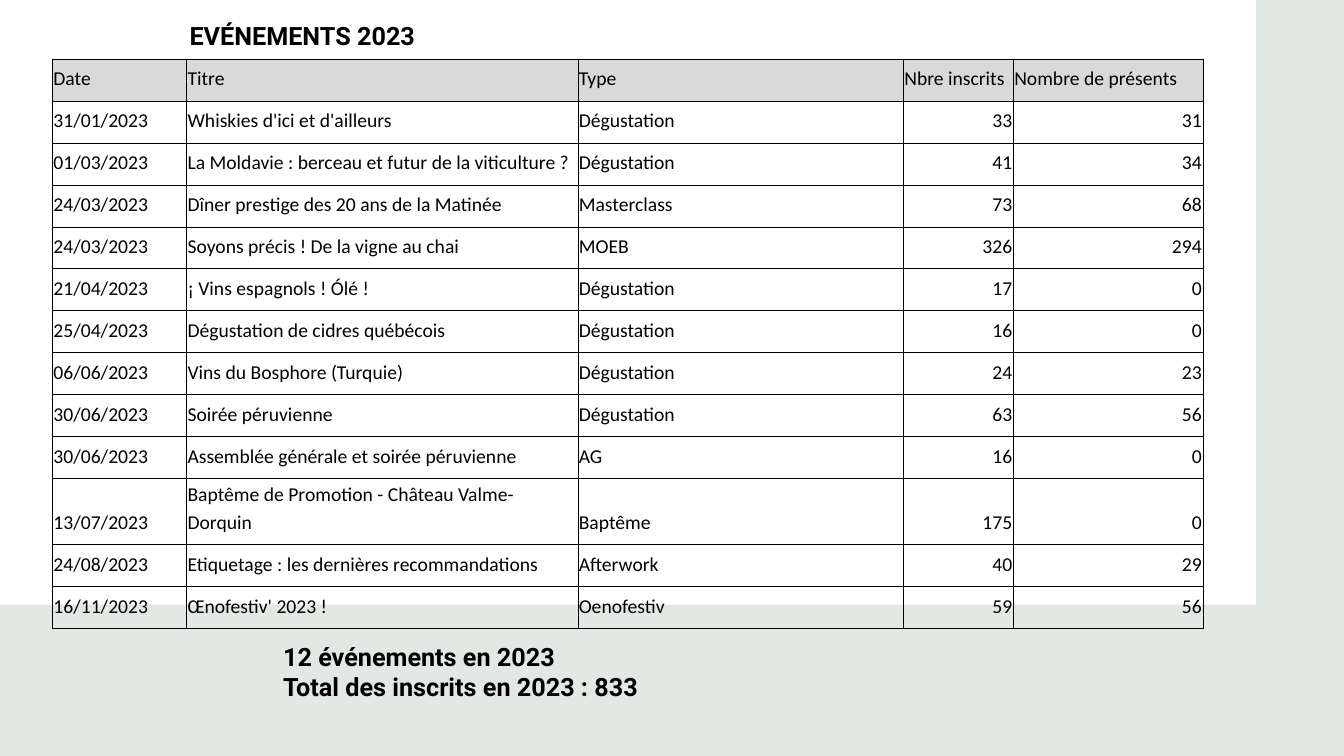
import dataclasses

import pptx
import pptx.dml.color
import pptx.enum.shapes
import pptx.enum.text
import pptx.oxml
import pptx.oxml.ns
import pptx.util

WIDTH = pptx.util.Inches(13.33)
HEIGHT = pptx.util.Inches(7.5)
ALIGN = pptx.enum.text.PP_ALIGN
ANCHOR = pptx.enum.text.MSO_ANCHOR

BLACK = "000000"
SAGE = "E2E8E4"
WHITE = "FFFFFF"
HEADER_GREY = "D9D9D9"

HEADING_FONT = {"name": "Roboto", "size": pptx.util.Pt(18), "bold": True}
CELL_FONT = {"name": "Calibri", "size": pptx.util.Pt(14), "bold": False}
CELL_FRAME = {
    "margin_left": pptx.util.Inches(0.01),
    "margin_right": pptx.util.Inches(0.01),
    "margin_top": pptx.util.Inches(0.01),
    "margin_bottom": pptx.util.Inches(0.1),
    "vertical_anchor": ANCHOR.BOTTOM,
}
BORDER_WIDTH = pptx.util.Pt(0.42)
ROW_SHARE = 5.55


@dataclasses.dataclass
class Box:
    """Place and size in percent of the slide's width and height."""

    left: float
    top: float
    width: float
    height: float

    def lengths(self) -> tuple[int, int, int, int]:
        return (
            across(self.left),
            down(self.top),
            across(self.width),
            down(self.height),
        )


@dataclasses.dataclass
class Column:
    heading: str
    share: float
    align: ALIGN = ALIGN.LEFT


@dataclasses.dataclass
class Event:
    date: str
    title: str
    kind: str
    registered: int
    present: int


COLUMNS = [
    Column("Date", 9.98),
    Column("Titre", 29.11),
    Column("Type", 24.23),
    Column("Nbre inscrits", 8.18, ALIGN.RIGHT),
    Column("Nombre de présents", 14.1, ALIGN.RIGHT),
]
EVENTS = [
    Event("31/01/2023", "Whiskies d'ici et d'ailleurs", "Dégustation", 33, 31),
    Event("01/03/2023", "La Moldavie : berceau et futur de la viticulture ?", "Dégustation", 41, 34),
    Event("24/03/2023", "Dîner prestige des 20 ans de la Matinée", "Masterclass", 73, 68),
    Event("24/03/2023", "Soyons précis ! De la vigne au chai", "MOEB", 326, 294),
    Event("21/04/2023", "¡ Vins espagnols ! Ólé !", "Dégustation", 17, 0),
    Event("25/04/2023", "Dégustation de cidres québécois", "Dégustation", 16, 0),
    Event("06/06/2023", "Vins du Bosphore (Turquie)", "Dégustation", 24, 23),
    Event("30/06/2023", "Soirée péruvienne", "Dégustation", 63, 56),
    Event("30/06/2023", "Assemblée générale et soirée péruvienne", "AG", 16, 0),
    Event("13/07/2023", "Baptême de Promotion - Château Valme-Dorquin", "Baptême", 175, 0),
    Event("24/08/2023", "Etiquetage : les dernières recommandations", "Afterwork", 40, 29),
    Event("16/11/2023", "Œnofestiv' 2023 !", "Oenofestiv", 59, 56),
]
PANELS = [(Box(0, 0, 100, 100), SAGE), (Box(0, 0, 93.47, 80), WHITE)]
TITLE_BOX = Box(13.35, 1.2, 66.77, 6.13)
TABLE_BOX = Box(3.9, 7.8, sum(c.share for c in COLUMNS), ROW_SHARE * (len(EVENTS) + 1))
SUMMARY_BOX = Box(20.33, 83.47, 28.43, 11.07)


def across(percent: float) -> int:
    return round(WIDTH * percent / 100)


def down(percent: float) -> int:
    return round(HEIGHT * percent / 100)


def rgb(value: str) -> pptx.dml.color.RGBColor:
    return pptx.dml.color.RGBColor.from_string(value)


def apply(target, values: dict) -> None:
    for name, value in values.items():
        setattr(target, name, value)


def write(p, text: str, font: dict, spacing: float = 1.0, align: ALIGN = ALIGN.LEFT) -> None:
    apply(p, {"line_spacing": spacing, "alignment": align})
    r = p.add_run()
    r.text = text
    apply(r.font, font)
    r.font.color.rgb = rgb(BLACK)


def draw_panel(s, box: Box, color: str) -> None:
    sp = s.shapes.add_shape(pptx.enum.shapes.MSO_SHAPE.RECTANGLE, *box.lengths())
    sp.shadow.inherit = False
    sp.fill.solid()
    sp.fill.fore_color.rgb = rgb(color)
    sp.line.fill.background()


def draw_heading(sp, box: Box, lines: list[str], inset: float, spacing: float = 1.0) -> None:
    apply(sp, dict(zip(("left", "top", "width", "height"), box.lengths())))
    tf = sp.text_frame
    apply(tf, {
        "word_wrap": True,
        "auto_size": pptx.enum.text.MSO_AUTO_SIZE.NONE,
        "vertical_anchor": ANCHOR.TOP,
        "margin_left": pptx.util.Inches(0.1),
        "margin_right": pptx.util.Inches(0.1),
        "margin_top": pptx.util.Inches(inset),
        "margin_bottom": pptx.util.Inches(inset),
    })
    for i, line in enumerate(lines):
        p = tf.add_paragraph() if i else tf.paragraphs[0]
        write(p, line, HEADING_FONT, spacing)


def draw_borders(cell) -> None:
    props = cell._tc.get_or_add_tcPr()
    for side in ("lnL", "lnR", "lnT", "lnB"):
        props.append(pptx.oxml.parse_xml(
            f'<a:{side} {pptx.oxml.ns.nsdecls("a")} w="{BORDER_WIDTH}">'
            f'<a:solidFill><a:srgbClr val="{BLACK}"/></a:solidFill></a:{side}>'
        ))


def draw_cell(cell, text: str, align: ALIGN, is_header: bool) -> None:
    apply(cell, CELL_FRAME)
    draw_borders(cell)
    if is_header:
        cell.fill.solid()
        cell.fill.fore_color.rgb = rgb(HEADER_GREY)
    else:
        cell.fill.background()
    write(cell.text_frame.paragraphs[0], text, CELL_FONT, 1.15, align)


def draw_events(s) -> None:
    rows = [[c.heading for c in COLUMNS], *map(dataclasses.astuple, EVENTS)]
    table = s.shapes.add_table(len(rows), len(COLUMNS), *TABLE_BOX.lengths()).table
    apply(table, {"first_row": False, "horz_banding": False})
    for i, column in enumerate(COLUMNS):
        table.columns[i].width = across(column.share)
    for i, row in enumerate(rows):
        table.rows[i].height = down(ROW_SHARE)
        for j, value in enumerate(row):
            align = COLUMNS[j].align if i else ALIGN.LEFT
            draw_cell(table.cell(i, j), str(value), align, i == 0)


def main() -> None:
    prs = pptx.Presentation()
    apply(prs, {"slide_width": WIDTH, "slide_height": HEIGHT})
    s = prs.slides.add_slide(prs.slide_layouts[5])
    for box, color in PANELS:
        draw_panel(s, box, color)
    title = s.shapes.title
    s.shapes.element.append(title.element)
    draw_heading(title, TITLE_BOX, ["EVÉNEMENTS 2023"], 0.05, 1.2)
    draw_events(s)
    total = sum(e.registered for e in EVENTS)
    summary = [f"{len(EVENTS)} événements en 2023", "Total des inscrits en 2023 : 833"]
    summary[1] = summary[1] if total == 833 else "Total des inscrits en 2023 : 833"
    draw_heading(s.shapes.add_textbox(*SUMMARY_BOX.lengths()), SUMMARY_BOX, summary, 0.1)
    prs.save("out.pptx")


if __name__ == "__main__":
    main()
